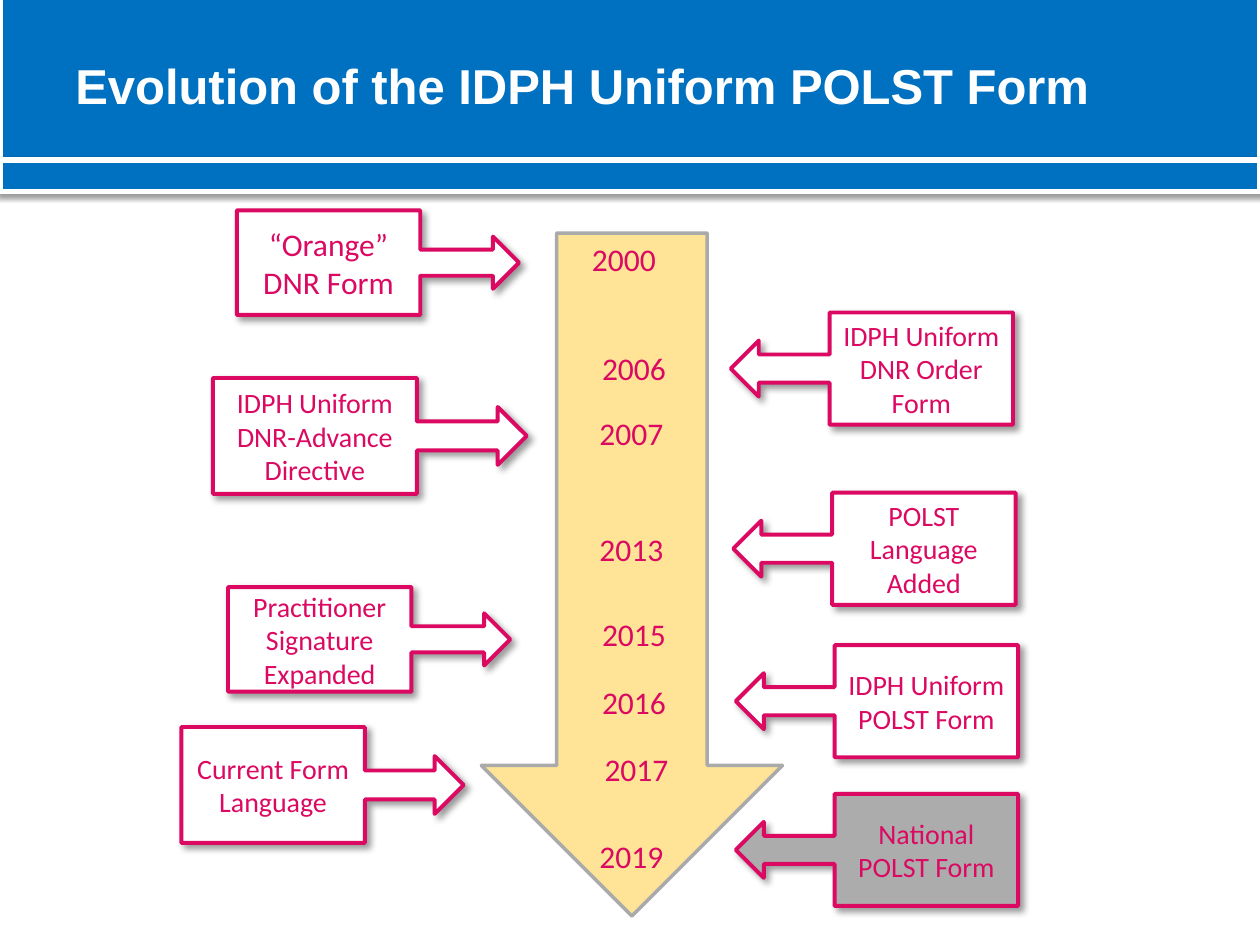
from lxml import etree
from pptx import Presentation
from pptx.dml.color import RGBColor
from pptx.enum.shapes import MSO_SHAPE
from pptx.enum.text import MSO_ANCHOR, PP_ALIGN
from pptx.oxml.ns import qn
from pptx.util import Inches, Pt

RECTANGLE = MSO_SHAPE.RECTANGLE
DOWN_ARROW = MSO_SHAPE.DOWN_ARROW
POINT_RIGHT = MSO_SHAPE.RIGHT_ARROW_CALLOUT
POINT_LEFT = MSO_SHAPE.LEFT_ARROW_CALLOUT
MIDDLE = MSO_ANCHOR.MIDDLE
CENTER = PP_ALIGN.CENTER
LEFT = PP_ALIGN.LEFT

BLUE = RGBColor(0x00, 0x70, 0xC0)
WHITE = RGBColor(0xFF, 0xFF, 0xFF)
PINK = RGBColor(0xDB, 0x09, 0x62)
SAND = RGBColor(0xFF, 0xE4, 0x97)
SILVER = RGBColor(0xAA, 0xAA, 0xAA)
GRAY = RGBColor(0xAC, 0xAC, 0xAC)

# Shadows: opacity %, blur pt, distance pt, direction in degrees
BAND_SHADOW = (38, 3.1, 1.6, 90)
CALLOUT_SHADOW = (40, 4, 3, 45)

# Year labels: text, left, top
YEARS = [
    ("2000", 4.6, 1.86),
    ("2006", 4.68, 2.72),
    ("2007", 4.66, 3.24),
    ("2013", 4.66, 4.16),
    ("2015", 4.68, 4.83),
    ("2016", 4.68, 5.37),
    ("2017", 4.7, 5.9),
    ("2019", 4.66, 6.59),
]

# Callouts: lines, direction, box, text size, fill
CALLOUTS = [
    (["“Orange”", "DNR Form"], POINT_RIGHT, (1.88, 1.67, 2.24, 0.83), 18, WHITE),
    (["IDPH Uniform DNR Order Form"], POINT_LEFT, (5.8, 2.48, 2.24, 0.89), 16, WHITE),
    (["IDPH Uniform DNR-Advance Directive"], POINT_RIGHT, (1.69, 3, 2.49, 0.92), 16, WHITE),
    (["POLST Language Added"], POINT_LEFT, (5.82, 3.91, 2.24, 0.89), 16, WHITE),
    (["Practitioner Signature Expanded"], POINT_RIGHT, (1.81, 4.66, 2.24, 0.83), 16, WHITE),
    (["IDPH Uniform POLST Form"], POINT_LEFT, (5.84, 5.12, 2.24, 0.89), 16, WHITE),
    (["Current Form Language"], POINT_RIGHT, (1.44, 5.77, 2.24, 0.92), 16, WHITE),
    (["National POLST Form"], POINT_LEFT, (5.84, 6.3, 2.24, 0.89), 16, GRAY),
]


def add_shadow(shape, opacity, blur, distance, direction):
    effects = shape._element.spPr.find(qn("a:effectLst"))
    shadow = etree.SubElement(
        effects, qn("a:outerShdw"), blurRad=str(Pt(blur)), dist=str(Pt(distance)),
        dir=str(direction * 60000), algn="ctr", rotWithShape="0")
    color = etree.SubElement(shadow, qn("a:srgbClr"), val="000000")
    etree.SubElement(color, qn("a:alpha"), val=str(opacity * 1000))


def add_outlined(slide, kind, box, fill, line, line_width, shadow=None):
    shape = slide.shapes.add_shape(kind, *map(Inches, box))
    shape.fill.solid()
    shape.fill.fore_color.rgb = fill
    shape.line.color.rgb = line
    shape.line.width = Pt(line_width)
    shape.shadow.inherit = False
    if shadow:
        add_shadow(shape, *shadow)
    return shape


def write(frame, lines, size, color, font="Calibri", align=LEFT, bold=False):
    frame.word_wrap = True
    frame.text = "\n".join(lines)
    for paragraph in frame.paragraphs:
        paragraph.alignment = align
        paragraph.font.name = font
        paragraph.font.size = Pt(size)
        paragraph.font.bold = bold
        paragraph.font.color.rgb = color


def add_header(slide, left, top, width):
    # Two stacked bands, then the title over the upper one
    band_height = 1.32
    for band_top, height in ((top, band_height), (top + band_height, 0.25)):
        add_outlined(slide, RECTANGLE, (left, band_top, width, height),
                     BLUE, WHITE, 3, BAND_SHADOW)
    title = slide.shapes.add_textbox(
        Inches(left + 0.5), Inches(top + 0.1), Inches(width - 1), Inches(1.25))
    title.text_frame.vertical_anchor = MIDDLE
    write(title.text_frame, ["Evolution of the IDPH Uniform POLST Form"],
          28, WHITE, font="Arial", bold=True)


def add_timeline(slide, box):
    add_outlined(slide, DOWN_ARROW, box, SAND, SILVER, 2)
    for year, left, top in YEARS:
        label = slide.shapes.add_textbox(
            Inches(left), Inches(top), Inches(0.83), Inches(0.4))
        write(label.text_frame, [year], 18, PINK)


def add_callout(slide, lines, direction, box, size, fill):
    callout = add_outlined(slide, direction, box, fill, PINK, 2.25, CALLOUT_SHADOW)
    callout.text_frame.vertical_anchor = MIDDLE
    write(callout.text_frame, lines, size, PINK, align=CENTER)


def main():
    prs = Presentation()
    prs.slide_width, prs.slide_height = Inches(10), Inches(7.5)
    slide = prs.slides.add_slide(prs.slide_layouts[6])
    add_header(slide, 0, -0.05, 10)
    add_timeline(slide, (3.82, 1.85, 2.39, 5.42))
    for callout in CALLOUTS:
        add_callout(slide, *callout)
    prs.save("out.pptx")


if __name__ == "__main__":
    main()
